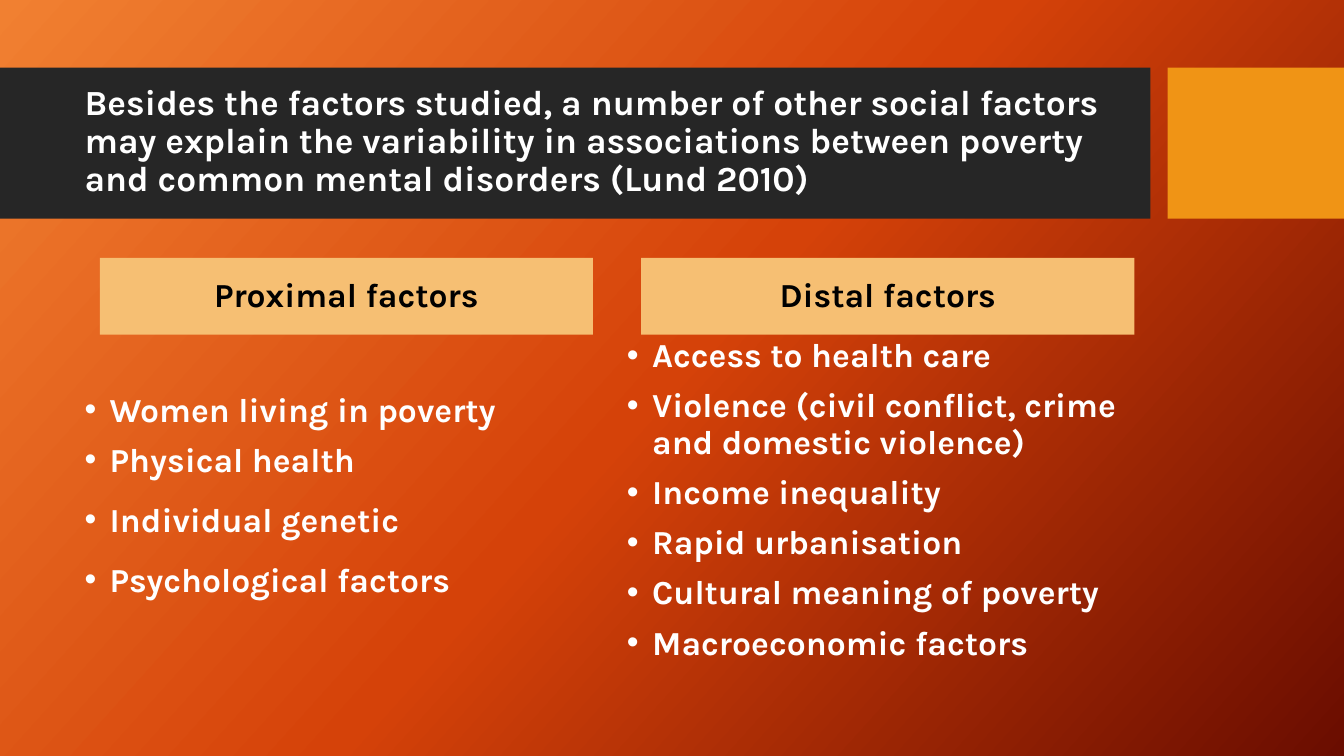
"""Build a slide on proximal and distal social factors behind mental disorders."""
from copy import deepcopy

from lxml.etree import SubElement
from pptx import Presentation
from pptx.dml.color import RGBColor
from pptx.enum.shapes import MSO_SHAPE as SHAPE
from pptx.enum.text import MSO_ANCHOR as ANCHOR, PP_ALIGN as ALIGN
from pptx.oxml.ns import qn
from pptx.util import Inches, Pt

COLORS = {
    "glow": "F18031", "flame": "D54209", "ember": "6A0D00",
    "band": "262626", "accent": "F09415", "heading": "F6BF73",
    "white": "FFFFFF", "black": "000000",
}


def rgb(name):
    return RGBColor.from_string(COLORS[name])


def write(shape, lines, size=24, color="white", align=ALIGN.LEFT,
          anchor=ANCHOR.TOP, bullet=False):
    frame = shape.text_frame
    frame.word_wrap = True
    frame.vertical_anchor = anchor
    for i, (text, spacing) in enumerate(lines):
        paragraph = frame.paragraphs[0] if i == 0 else frame.add_paragraph()
        paragraph.text = text
        paragraph.alignment = align
        paragraph.line_spacing = spacing
        paragraph.space_before = Pt(10 if i else 0)
        if bullet:
            props = paragraph._p.get_or_add_pPr()
            props.set("marL", str(Inches(0.25)))
            props.set("indent", str(-Inches(0.25)))
            SubElement(props, qn("a:buFont"), typeface="Arial")
            SubElement(props, qn("a:buChar"), char="•")
        font = paragraph.runs[0].font
        font.name, font.size, font.bold = "Karla", Pt(size), True
        font.color.rgb = rgb(color)


prs = Presentation()
prs.slide_width, prs.slide_height = Inches(13.33), Inches(7.5)
slide = prs.slides.add_slide(prs.slide_layouts[6])

backdrop = slide.background.fill
backdrop.gradient()
backdrop.gradient_angle = 360 - 42
stop_list = slide.element.xpath(".//a:gsLst")[0]
stop_list.append(deepcopy(stop_list[0]))
stops = zip(backdrop.gradient_stops, (0, 0.5, 1), ("glow", "flame", "ember"))
for stop, position, color in stops:
    stop.position = position
    stop.color.rgb = rgb(color)

blocks = []
for left, top, width, height, color in (
    (0, 0.67, 11.41, 1.5, "band"),
    (11.58, 0.67, 1.75, 1.5, "accent"),
    (0.99, 2.56, 4.89, 0.76, "heading"),
    (6.36, 2.56, 4.89, 0.76, "heading"),
):
    block = slide.shapes.add_shape(SHAPE.RECTANGLE, Inches(left), Inches(top),
                                   Inches(width), Inches(height))
    block.shadow.inherit = False
    block.fill.solid()
    block.fill.fore_color.rgb = rgb(color)
    block.line.fill.background()
    blocks.append(block)

title = slide.shapes.add_textbox(Inches(0.74), Inches(0.82), Inches(10.51), Inches(1.18))
write(title, [("Besides the factors studied, a number of other social factors "
               "may explain the variability in associations between poverty "
               "and common mental disorders (Lund 2010)", 0.9)],
      size=25.2, anchor=ANCHOR.MIDDLE)

proximal = [("Women living in poverty", 0.9), ("Physical health", 0.9),
            ("Individual genetic", 1.14), ("Psychological factors", 1.14)]
distal = [(factor, 0.9) for factor in (
    "Access to health care",
    "Violence (civil conflict, crime and domestic violence)",
    "Income inequality", "Rapid urbanisation",
    "Cultural meaning of poverty", "Macroeconomic factors")]

for heading, name, factors, left, top, width, height in (
    (blocks[2], "Proximal factors", proximal, 0.74, 3.85, 5.14, 2.64),
    (blocks[3], "Distal factors", distal, 6.12, 3.31, 5.5, 3.36),
):
    write(heading, [(name, 0.9)], color="black", align=ALIGN.CENTER, anchor=ANCHOR.MIDDLE)
    factor_list = slide.shapes.add_textbox(Inches(left), Inches(top),
                                           Inches(width), Inches(height))
    write(factor_list, factors, bullet=True)

prs.save("out.pptx")
